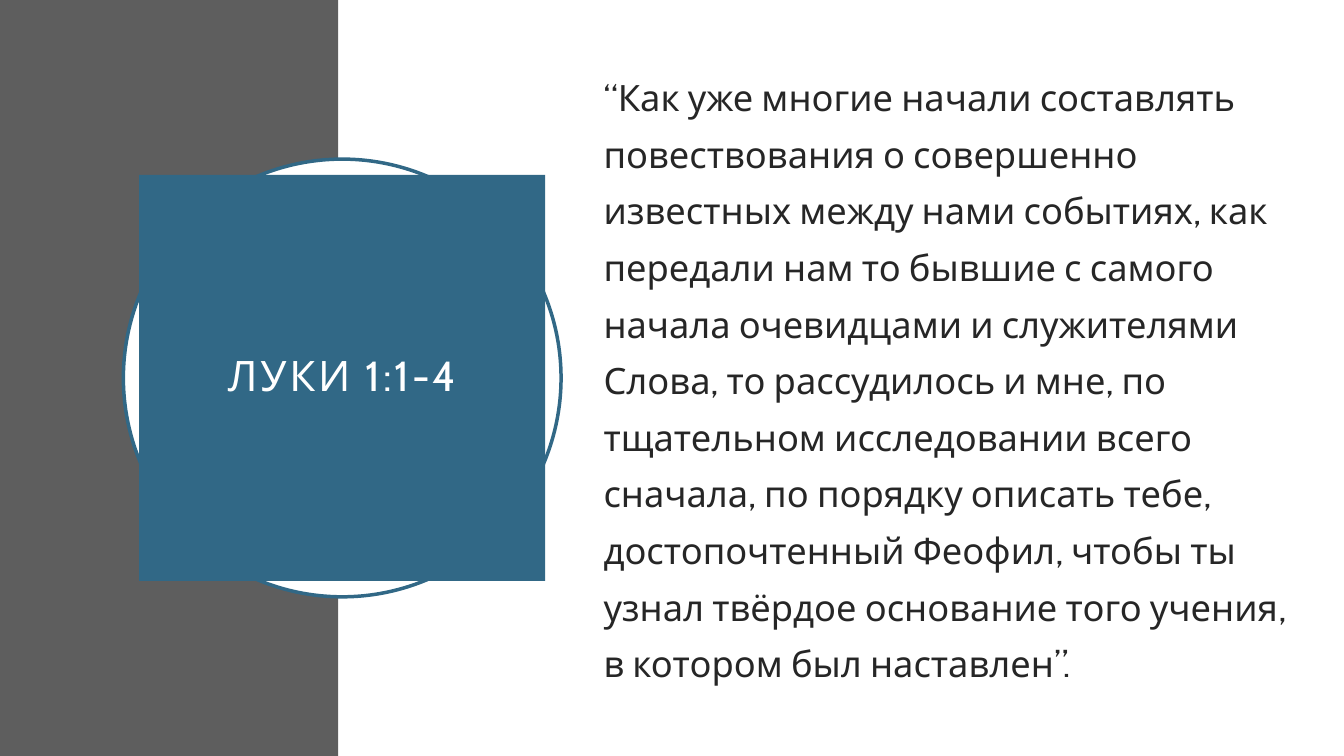
from pptx import Presentation
from pptx.dml.color import RGBColor
from pptx.enum.shapes import MSO_SHAPE
from pptx.enum.text import MSO_ANCHOR, PP_ALIGN
from pptx.util import Cm, Pt

hues = {"gray": "5E5E5E", "white": "FFFFFF", "blue": "316886", "ink": "262626"}
verse = (
    "“Как уже многие начали составлять повествования о совершенно известных "
    "между нами событиях, как передали нам то бывшие с самого начала очевидцами "
    "и служителями Слова, то рассудилось и мне, по тщательном исследовании всего "
    "сначала, по порядку описать тебе, достопочтенный Феофил, чтобы ты узнал "
    "твёрдое основание того учения, в котором был наставлен”."
)

deck = Presentation()
deck.slide_width, deck.slide_height = Cm(33.87), Cm(19.05)
slide = deck.slides.add_slide(deck.slide_layouts[6])


def draw(kind, left, top, width, height, fill, line=None):
    shape = slide.shapes.add_shape(kind, Cm(left), Cm(top), Cm(width), Cm(height))
    shape.shadow.inherit = False
    shape.fill.solid()
    shape.fill.fore_color.rgb = RGBColor.from_string(hues[fill])
    if line:
        shape.line.color.rgb = RGBColor.from_string(hues[line])
        shape.line.width = Pt(2.5)
    else:
        shape.line.fill.background()
    return shape


def write(frame, text, size, hue, space):
    frame.word_wrap = True
    para = frame.paragraphs[0]
    para.line_spacing = space
    run = para.add_run()
    run.text = text
    run.font.name = "Cabin"
    run.font.size = Pt(size)
    run.font.color.rgb = RGBColor.from_string(hues[hue])
    return para, run


draw(MSO_SHAPE.RECTANGLE, 0, 0, 8.53, 19.05, "gray")
draw(MSO_SHAPE.RECTANGLE, 8.53, 0, 25.34, 19.05, "white")
draw(MSO_SHAPE.OVAL, 3.11, 4.01, 11.03, 11.03, "white", "blue")

badge = draw(MSO_SHAPE.RECTANGLE, 3.51, 4.41, 10.23, 10.23, "blue")
frame = badge.text_frame
frame.vertical_anchor = MSO_ANCHOR.MIDDLE
frame.margin_left = frame.margin_right = Cm(0.51)
frame.margin_top = frame.margin_bottom = Cm(0.51)
para, run = write(frame, "ЛУКИ 1:1-4", 30, "white", 0.9)
para.alignment = PP_ALIGN.CENTER
run.font._element.set("spc", "200")

body = slide.shapes.add_textbox(Cm(14.96), Cm(1.45), Cm(17.86), Cm(17.04))
write(body.text_frame, verse, 25.9, "ink", 1.3)

deck.save("out.pptx")
